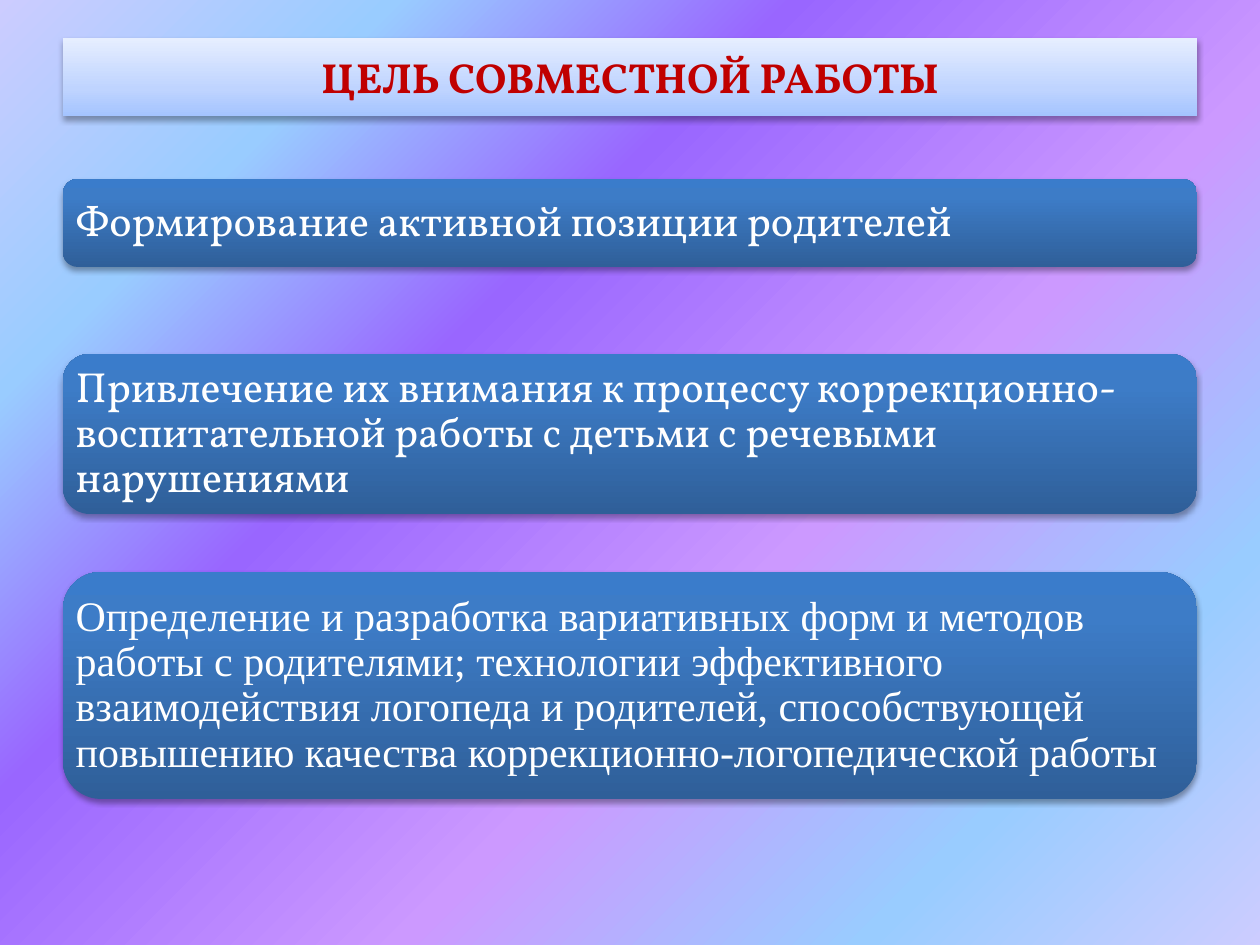
from dataclasses import dataclass

from lxml import etree
from pptx import Presentation
from pptx.dml.color import RGBColor
from pptx.enum.shapes import MSO_SHAPE
from pptx.enum.text import MSO_ANCHOR, MSO_AUTO_SIZE, PP_ALIGN
from pptx.oxml.ns import qn
from pptx.util import Pt

ROUNDED = MSO_SHAPE.ROUNDED_RECTANGLE
MIDDLE = MSO_ANCHOR.MIDDLE
NO_FIT = MSO_AUTO_SIZE.NONE
LEFT, CENTER = PP_ALIGN.LEFT, PP_ALIGN.CENTER
EMU_PER_PX = 914400 / 126
CORNER = 0.1667
CORNER_INSET = 0.29


@dataclass(frozen=True)
class Theme:
    """Colours, fonts and sizes of the slide."""
    serif: str = "Vollkorn"
    plain: str = "Times New Roman"
    size: int = 24
    title: str = "C00000"
    text: str = "FFFFFF"
    backdrop: tuple = ((0, "CCCCFF"), (18, "99CCFF"), (36, "9966FF"),
                       (61, "CC99FF"), (82, "99CCFF"), (100, "CCCCFF"))
    banner: tuple = ((0, "A4C4FF"), (35, "BFD4FF"), (100, "E6EEFF"))
    panel: tuple = ((0, "2F5F99"), (80, "3D7CC7"), (100, "3A7CCB"))
    banner_shadow: tuple = (32, 3.5, 2.2)
    panel_shadow: tuple = (35, 3.1, 1.8)


THEME = Theme()
TITLE = "ЦЕЛЬ СОВМЕСТНОЙ РАБОТЫ"
TITLE_BOX = (63, 38, 1134, 78)
GOALS = (
    (179, 88, THEME.serif, "Формирование активной позиции родителей"),
    (354, 160, THEME.serif,
     "Привлечение их внимания к процессу коррекционно-воспитательной работы "
     "с детьми с речевыми нарушениями"),
    (572, 227, THEME.plain,
     "Определение и разработка вариативных форм и методов работы с родителями; "
     "технологии эффективного взаимодействия логопеда и родителей, способствующей "
     "повышению качества коррекционно-логопедической работы"),
)


def px(value):
    """Turn px into EMU."""
    return round(value * EMU_PER_PX)


def set_all(obj, **values):
    """Set each named attribute of an object."""
    for name, value in values.items():
        setattr(obj, name, value)


def add_color(parent, color):
    """Add an RGB colour element."""
    return etree.SubElement(parent, qn("a:srgbClr"), val=color)


def paint(fill, element, stops, angle):
    """Fill with a gradient of any number of stops, angle counter-clockwise."""
    fill.gradient()
    fill.gradient_angle = angle
    gs_list = element.find(".//" + qn("a:gsLst"))
    for old in list(gs_list):
        gs_list.remove(old)
    for position, color in stops:
        add_color(etree.SubElement(gs_list, qn("a:gs"), pos=str(position * 1000)), color)


def style_panel(sp, stops, shadow):
    """Give a shape a vertical gradient, no outline and a soft shadow below."""
    alpha, blur, distance = shadow
    paint(sp.fill, sp.element, stops, 90)
    sp.line.fill.background()
    sp.shadow.inherit = False
    outer = etree.SubElement(
        sp.element.find(".//" + qn("a:effectLst")), qn("a:outerShdw"),
        blurRad=str(Pt(blur)), dist=str(Pt(distance)), dir="5400000", rotWithShape="0")
    etree.SubElement(add_color(outer, "000000"), qn("a:alpha"), val=str(alpha * 1000))


def write(sp, text, font, color, align, bold=False, spacing=1.0):
    """Write one formatted paragraph into a shape."""
    tf = sp.text_frame
    set_all(tf, word_wrap=True, auto_size=NO_FIT, vertical_anchor=MIDDLE)
    p = tf.paragraphs[0]
    set_all(p, alignment=align, line_spacing=spacing)
    r = p.add_run()
    r.text = text
    set_all(r.font, name=font, size=Pt(THEME.size), bold=bold)
    r.font.color.rgb = RGBColor.from_string(color)


def add_title(s, box):
    """Place the title banner."""
    sp = s.shapes.title
    set_all(sp, **dict(zip(("left", "top", "width", "height"), map(px, box))))
    style_panel(sp, THEME.banner, THEME.banner_shadow)
    write(sp, TITLE, THEME.serif, THEME.title, CENTER, bold=True)


def add_goal(s, box, font, text):
    """Place one rounded goal panel with its text."""
    sp = s.shapes.add_shape(ROUNDED, *map(px, box))
    sp.adjustments[0] = CORNER
    style_panel(sp, THEME.panel, THEME.panel_shadow)
    inset = px(12.6 - CORNER_INSET * CORNER * box[3])
    sides = ("left", "top", "right", "bottom")
    set_all(sp.text_frame, **{f"margin_{side}": inset for side in sides})
    write(sp, text, font, THEME.text, LEFT, spacing=0.9)


def main():
    """Build and save the slide."""
    prs = Presentation()
    set_all(prs, slide_width=px(1260), slide_height=px(945))
    s = prs.slides.add_slide(prs.slide_layouts[5])
    paint(s.background.fill, s.element, THEME.backdrop, 315)
    add_title(s, TITLE_BOX)
    left, _, width, _ = TITLE_BOX
    for top, height, font, text in GOALS:
        add_goal(s, (left, top, width, height), font, text)
    prs.save("out.pptx")


if __name__ == "__main__":
    main()
